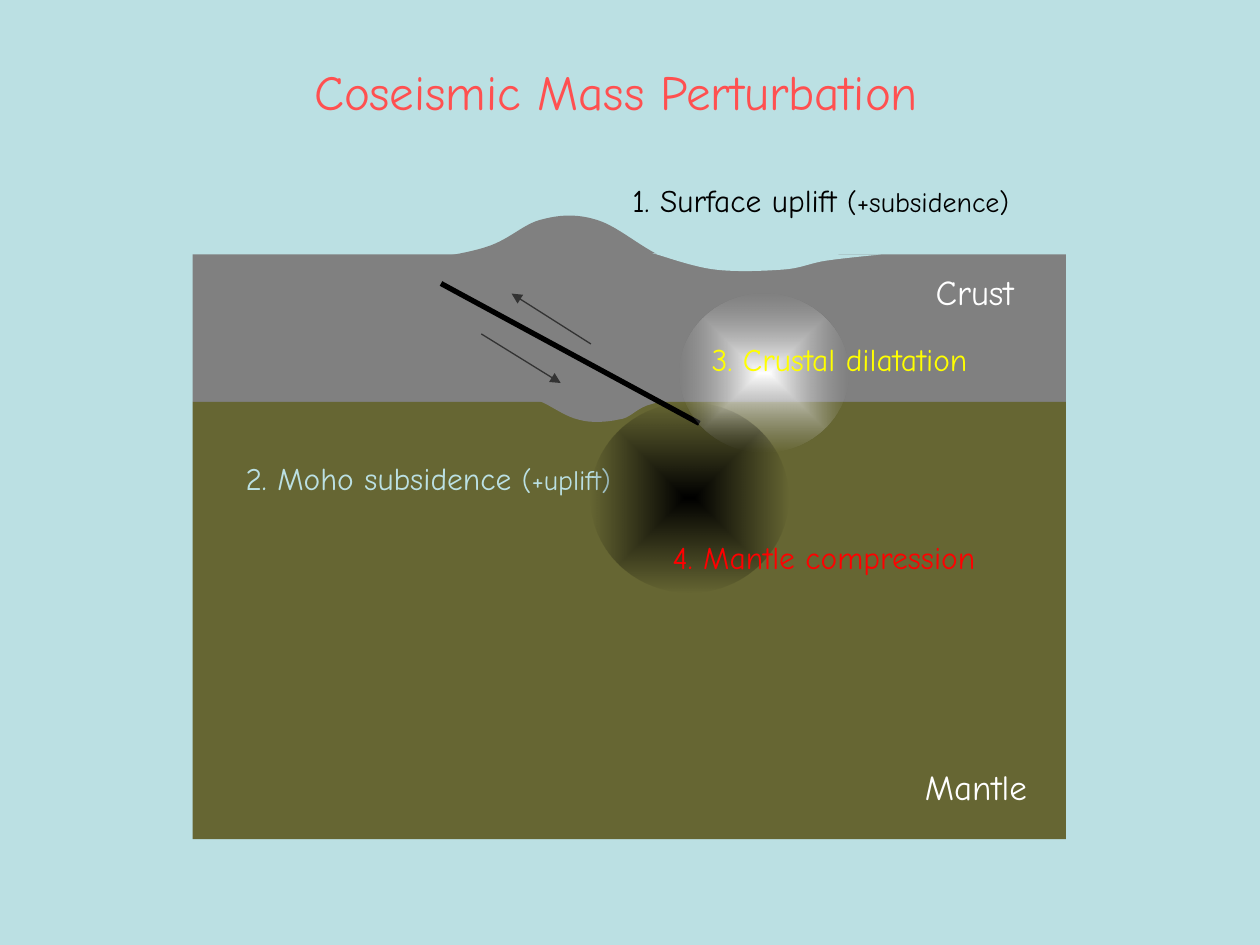
from lxml import etree
from pptx import Presentation
from pptx.dml.color import RGBColor
from pptx.enum.shapes import MSO_CONNECTOR, MSO_SHAPE
from pptx.enum.text import MSO_AUTO_SIZE, PP_ALIGN
from pptx.oxml import parse_xml
from pptx.oxml.ns import nsdecls, qn
from pptx.util import Inches, Pt

STRAIGHT = MSO_CONNECTOR.STRAIGHT
RECTANGLE, OVAL = MSO_SHAPE.RECTANGLE, MSO_SHAPE.OVAL
FIT_SHAPE = MSO_AUTO_SIZE.SHAPE_TO_FIT_TEXT
LEFT, CENTER = PP_ALIGN.LEFT, PP_ALIGN.CENTER
FONT = "Comic Neue"
COLORS = {
    "sky": "BBE0E3", "crust": "808080", "mantle": "666633", "title": "FF5050",
    "white": "FFFFFF", "black": "000000", "slip": "333333", "halo": "B6B6B6",
    "dilatation": "FFFF00", "compression": "FF0000",
}

UPLIFT = [
    (1.66, 0.07), (1.77, 0.05), (2.15, 0), (2.33, -0.06),
    (2.52, -0.12), (2.63, -0.25), (2.78, -0.28),
    (2.93, -0.32), (3.07, -0.32), (3.22, -0.27),
    (3.37, -0.22), (3.53, -0.08), (3.69, 0),
    (3.84, 0.08), (4.03, 0.17), (4.14, 0.22),
]
SUBSIDENCE = [
    (3.65, -0.01), (3.73, 0.01), (3.97, 0.1), (4.15, 0.12),
    (4.32, 0.14), (4.54, 0.13), (4.68, 0.12),
    (4.83, 0.11), (4.89, 0.07), (5.02, 0.05),
    (5.15, 0.03), (5.37, 0.01), (5.46, 0),
]
MOHO = [
    (2.6, 1.1), (2.64, 1.11), (2.72, 1.15), (2.79, 1.18),
    (2.87, 1.22), (2.97, 1.29), (3.06, 1.31),
    (3.16, 1.34), (3.29, 1.33), (3.38, 1.31),
    (3.47, 1.3), (3.5, 1.24), (3.6, 1.2),
    (3.69, 1.17), (3.88, 1.13), (3.95, 1.11),
]


def rgb(name):
    return RGBColor.from_string(COLORS[name])


def at(origin, point):
    return Inches(origin[0] + point[0]), Inches(origin[1] + point[1])


def fill_plain(shape, color):
    shape.shadow.inherit = False
    shape.fill.solid()
    shape.fill.fore_color.rgb = rgb(color)
    shape.line.fill.background()


def add_layer(slide, origin, offset, size, color):
    layer = slide.shapes.add_shape(RECTANGLE, *at(origin, offset), *map(Inches, size))
    fill_plain(layer, color)


def add_bulge(slide, origin, points, color):
    start, *rest = [at(origin, point) for point in points]
    builder = slide.shapes.build_freeform(*start)
    builder.add_line_segments(rest, close=False)
    bulge = builder.convert_to_shape()
    fill_plain(bulge, color)
    segments = list(bulge._element.iter(qn("a:lnTo")))
    for i in range(0, len(segments), 3):
        curve = etree.Element(qn("a:cubicBezTo"))
        segments[i].addprevious(curve)
        for segment in segments[i:i + 3]:
            curve.append(segment[0])
            segment.getparent().remove(segment)


def add_line(slide, origin, start, end, color, width, arrow=None):
    line = slide.shapes.add_connector(STRAIGHT, *at(origin, start), *at(origin, end))
    line.line.color.rgb = rgb(color)
    line.line.width = Pt(width)
    if arrow:
        etree.SubElement(line.line._get_or_add_ln(), qn(arrow), type="triangle")
    etree.SubElement(line._element.spPr, qn("a:effectLst"))


def add_glow(slide, origin, offset, size, core, rim):
    glow = slide.shapes.add_shape(OVAL, *at(origin, offset), *map(Inches, size))
    fill_plain(glow, core)
    solid = glow._element.spPr.find(qn("a:solidFill"))
    gradient = parse_xml(
        f'<a:gradFill {nsdecls("a")} rotWithShape="1"><a:gsLst>'
        f'<a:gs pos="0"><a:srgbClr val="{COLORS[core]}"/></a:gs>'
        f'<a:gs pos="100000"><a:srgbClr val="{COLORS[rim]}"><a:alpha val="0"/></a:srgbClr></a:gs>'
        '</a:gsLst><a:path path="shape">'
        '<a:fillToRect l="50000" t="50000" r="50000" b="50000"/></a:path></a:gradFill>')
    solid.getparent().replace(solid, gradient)


def add_label(slide, origin, offset, size, text, color, points, align=LEFT, aside=""):
    frame = slide.shapes.add_textbox(*at(origin, offset), *map(Inches, size)).text_frame
    frame.word_wrap = False
    frame.auto_size = FIT_SHAPE
    label = frame.paragraphs[0]
    label.alignment = align
    label.font.name = FONT
    label.font.color.rgb = rgb(color)
    label.font.size = Pt(points)
    label.add_run().text = text
    if aside:
        note = label.add_run()
        note.text = aside
        note.font.size = Pt(16)


def draw_layers(slide, box):
    left, top, width, height = box
    origin = (left, top)
    moho = 1.17
    add_layer(slide, origin, (0, 0), (width, moho), "crust")
    add_layer(slide, origin, (0, moho), (width, height - moho), "mantle")
    add_label(slide, origin, (5.75, 0.08), (0.91, 0.43), "Crust", "white", 20, CENTER)
    add_label(slide, origin, (5.67, 4.01), (1.09, 0.43), "Mantle", "white", 20, CENTER)


def draw_deformation(slide, box):
    origin = box[:2]
    add_line(slide, origin, (2.29, 0.63), (2.92, 1.02), "slip", 0.75, "a:tailEnd")
    add_line(slide, origin, (2.53, 0.31), (3.16, 0.71), "slip", 0.75, "a:headEnd")
    for points, color in ((UPLIFT, "crust"), (SUBSIDENCE, "sky"), (MOHO, "crust")):
        add_bulge(slide, origin, points, color)
    add_label(slide, origin, (3.39, -0.63), (3.63, 0.4),
              "1. Surface uplift ", "black", 18, aside="(+subsidence)")
    add_label(slide, origin, (0.32, 1.57), (3.42, 0.4),
              "2. Moho subsidence ", "sky", 18, aside="(+uplift)")
    add_line(slide, origin, (4.02, 1.34), (1.97, 0.23), "black", 3)


def draw_density_changes(slide, box):
    origin = box[:2]
    add_glow(slide, origin, (3.86, 0.31), (1.34, 1.26), "white", "halo")
    add_glow(slide, origin, (3.16, 1.18), (1.57, 1.5), "black", "black")
    add_label(slide, origin, (4.02, 0.63), (2.51, 0.4),
              "3. Crustal dilatation", "dilatation", 18)
    add_label(slide, origin, (3.71, 2.2), (2.79, 0.4),
              "4. Mantle compression", "compression", 18)


def main():
    prs = Presentation()
    prs.slide_width, prs.slide_height = Inches(10), Inches(7.5)
    slide = prs.slides.add_slide(prs.slide_layouts[6])
    slide.background.fill.solid()
    slide.background.fill.fore_color.rgb = rgb("sky")
    section = (1.53, 2.02, 6.93, 4.64)
    draw_layers(slide, section)
    add_label(slide, (2.18, 0.44), (0, 0), (5.42, 0.57),
              "Coseismic Mass Perturbation", "title", 28, CENTER)
    draw_deformation(slide, section)
    draw_density_changes(slide, section)
    prs.save("out.pptx")


if __name__ == "__main__":
    main()
